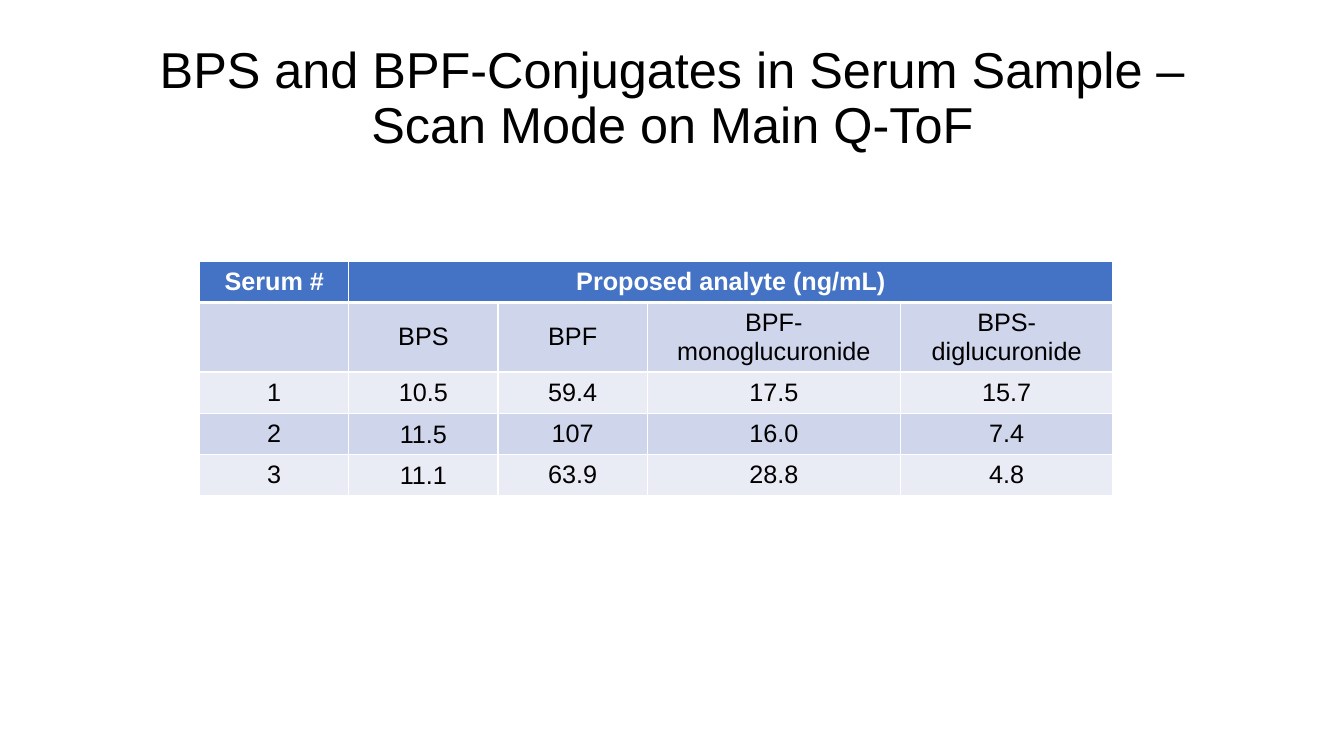
"""Build the serum sample results slide."""
from lxml.etree import SubElement
from pptx import Presentation
from pptx.dml.color import RGBColor
from pptx.enum.text import MSO_ANCHOR as Anchor, MSO_AUTO_SIZE as AutoSize, PP_ALIGN as Align
from pptx.oxml.ns import qn
from pptx.util import Pt

PX = 9144
FONT = "Arial"
COLORS = {
    "header": "4472C4",
    "dark_band": "CFD5EA",
    "light_band": "E9EBF5",
    "white": "FFFFFF",
    "black": "000000",
}
TITLE = "BPS and BPF-Conjugates in Serum Sample – Scan Mode on Main Q-ToF"
ROWS = [
    ["Serum #", "Proposed analyte (ng/mL)", "", "", ""],
    ["", "BPS", "BPF", "BPF-monoglucuronide", "BPS-diglucuronide"],
    ["1", "10.5", "59.4", "17.5", "15.7"],
    ["2", "11.5", "107", "16.0", "7.4"],
    ["3", "11.1", "63.9", "28.8", "4.8"],
]
COLUMN_WIDTHS = [148, 148, 148, 251, 211]
ROW_HEIGHTS = [41, 69, 41, 41, 41]


def format_text(text_frame, size, color, bold=False):
    """Centre the text and set its font."""
    for paragraph in text_frame.paragraphs:
        paragraph.alignment = Align.CENTER
        for font in [paragraph.font] + [run.font for run in paragraph.runs]:
            font.name = FONT
            font.size = Pt(size)
            font.bold = bold
            font.color.rgb = RGBColor.from_string(COLORS[color])


def add_title(slide, left, top, width, height):
    """Place and format the title placeholder."""
    title = slide.shapes.title
    title.left, title.top, title.width, title.height = (
        length * PX for length in (left, top, width, height))
    frame = title.text_frame
    frame.text = TITLE
    frame.word_wrap = True
    frame.auto_size = AutoSize.NONE
    frame.vertical_anchor = Anchor.TOP
    frame.paragraphs[0].line_spacing = 0.9
    format_text(frame, 36, "black")


def set_borders(cell, top, bottom):
    """Draw white borders around a cell, with widths in points."""
    properties = cell._tc.get_or_add_tcPr()
    for side, width in (("L", 1), ("R", 1), ("T", top), ("B", bottom)):
        line = SubElement(properties, qn(f"a:ln{side}"), w=str(Pt(width)))
        fill = SubElement(line, qn("a:solidFill"))
        SubElement(fill, qn("a:srgbClr"), val=COLORS["white"])


def format_cell(cell, row, column):
    """Style a cell according to its place in the table."""
    is_header = row == 0
    band = "header" if is_header else "dark_band" if row % 2 else "light_band"
    set_borders(cell, 3 if row == 1 else 1, 3 if is_header else 1)
    cell.fill.solid()
    cell.fill.fore_color.rgb = RGBColor.from_string(COLORS[band])
    cell.vertical_anchor = Anchor.MIDDLE
    if row > 1 and column == 1:
        cell.margin_left = cell.margin_top = cell.margin_right = PX
        cell.margin_bottom = 0
    format_text(cell.text_frame, 18, "white" if is_header else "black", is_header)


def add_results_table(slide, left, top):
    """Add the table of analyte concentrations."""
    table = slide.shapes.add_table(
        len(ROWS), len(COLUMN_WIDTHS), left * PX, top * PX,
        sum(COLUMN_WIDTHS) * PX, sum(ROW_HEIGHTS) * PX).table
    for column, width in zip(table.columns, COLUMN_WIDTHS):
        column.width = width * PX
    for row, height in zip(table.rows, ROW_HEIGHTS):
        row.height = height * PX
    for row, texts in enumerate(ROWS):
        for column, text in enumerate(texts):
            cell = table.cell(row, column)
            cell.text_frame.text = text
            format_cell(cell, row, column)
    table.cell(0, 1).merge(table.cell(0, 4))


def main():
    """Create the presentation and save it."""
    presentation = Presentation()
    presentation.slide_width = 1333 * PX
    presentation.slide_height = 750 * PX
    slide = presentation.slides.add_slide(presentation.slide_layouts[5])
    add_results_table(slide, 198, 259)
    add_title(slide, 92, 40, 1150, 145)
    presentation.save("out.pptx")


if __name__ == "__main__":
    main()
